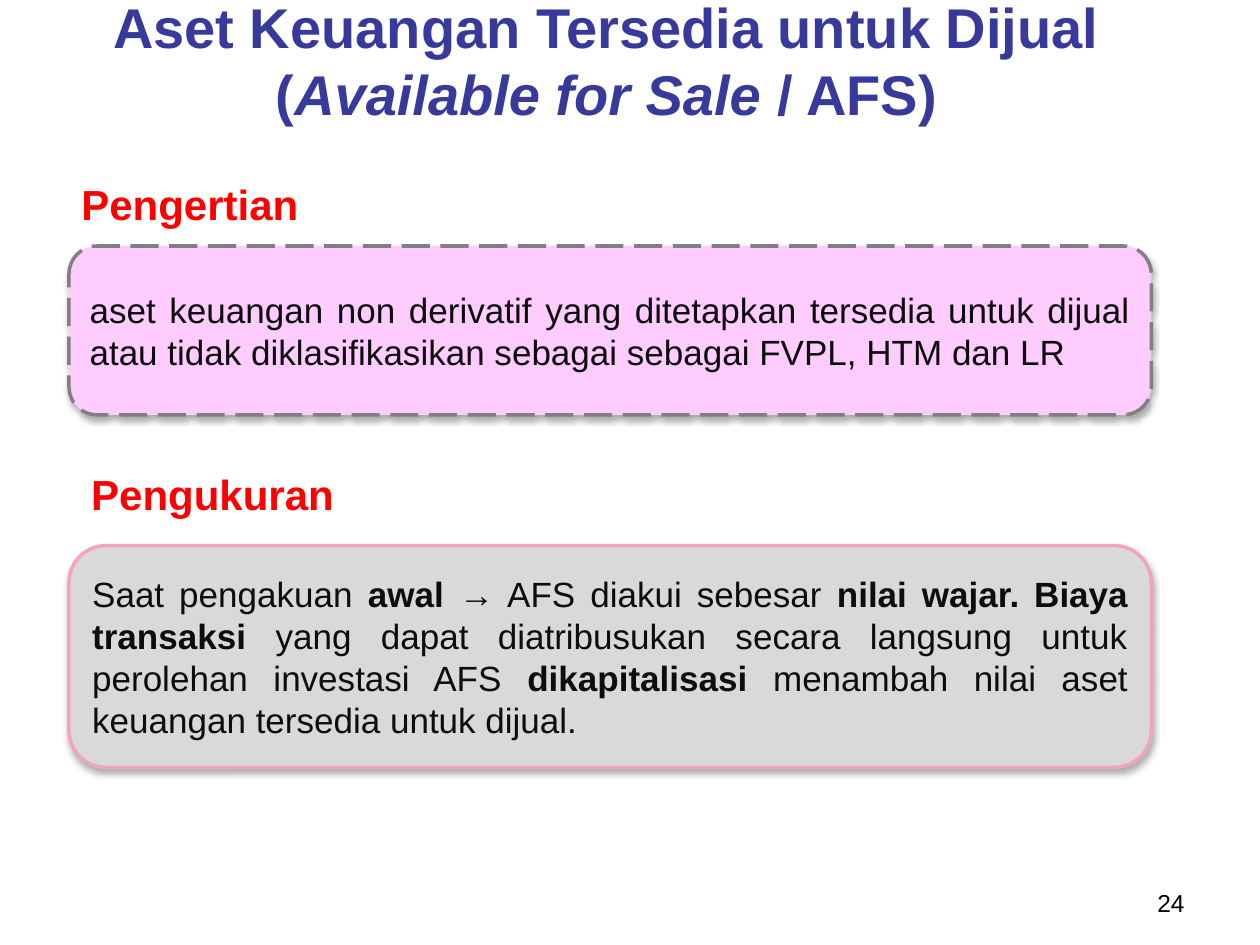
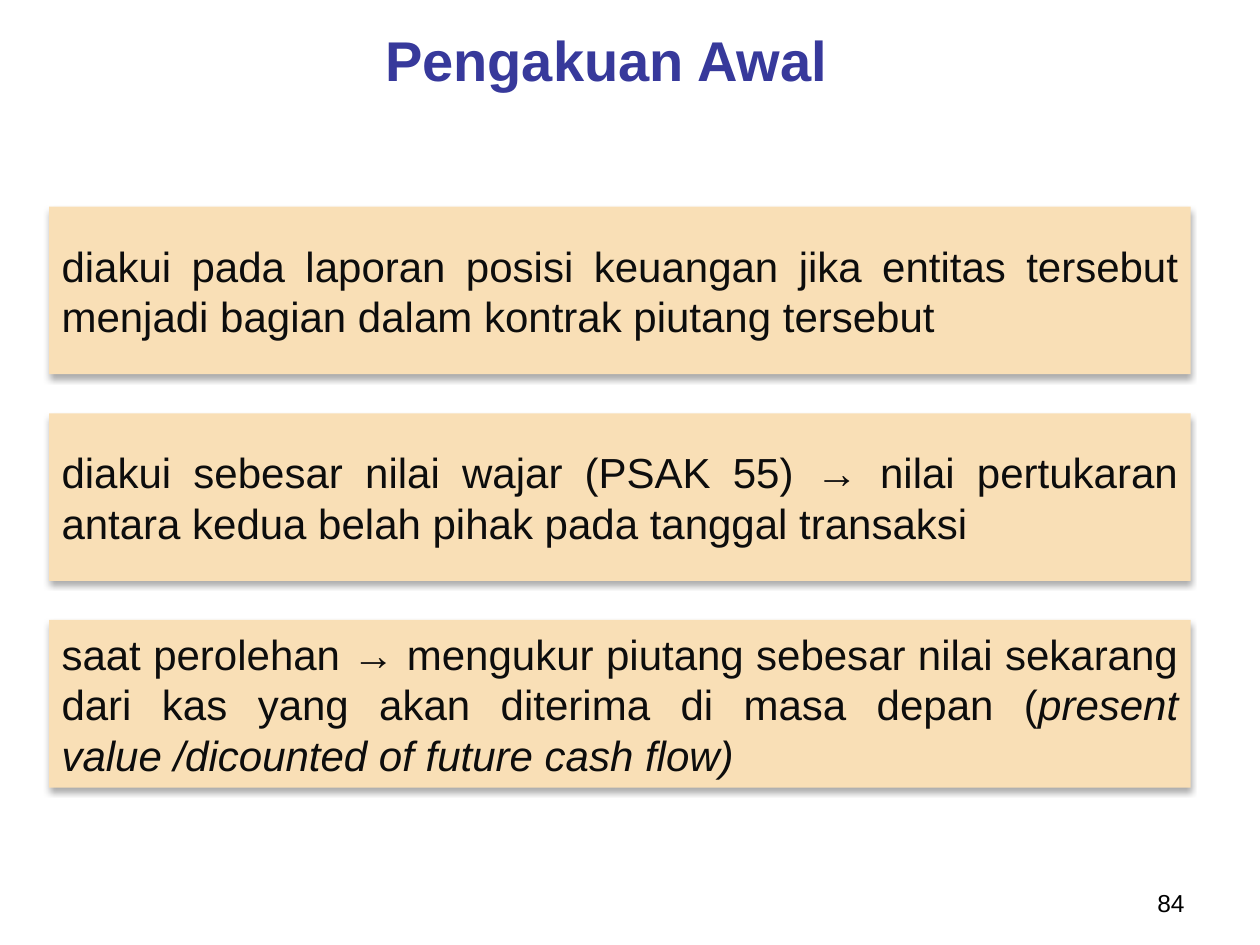
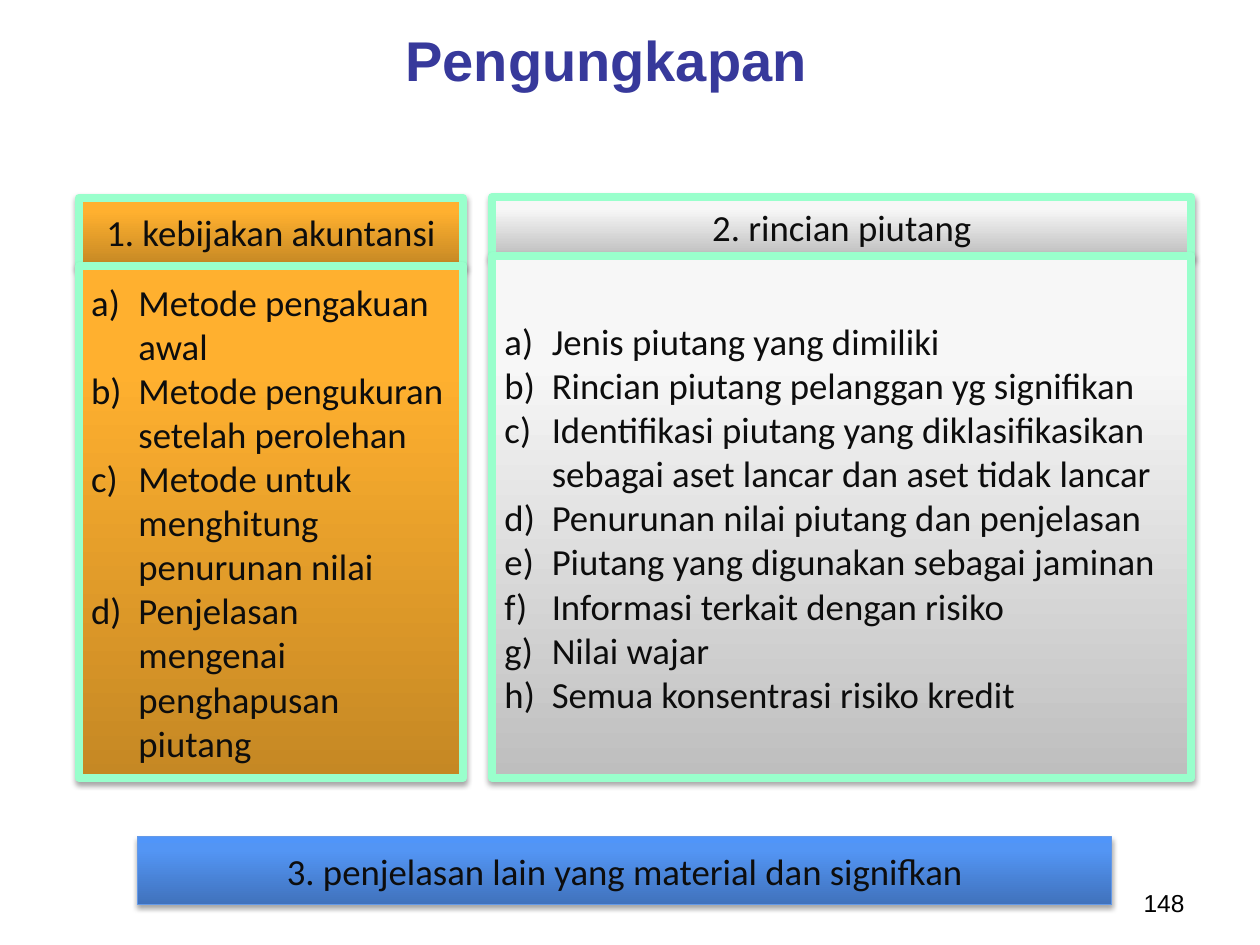
from dataclasses import dataclass
from typing import Optional

import lxml.etree
import pptx
import pptx.dml.color
import pptx.enum.dml
import pptx.enum.shapes
import pptx.enum.text
import pptx.oxml.ns
import pptx.util

Pt = pptx.util.Pt
RGB = pptx.dml.color.RGBColor
Align = pptx.enum.text.PP_ALIGN
Anchor = pptx.enum.text.MSO_ANCHOR
Fit = pptx.enum.text.MSO_AUTO_SIZE
Form = pptx.enum.shapes.MSO_SHAPE
Dash = pptx.enum.dml.MSO_LINE
qn = pptx.oxml.ns.qn

# Colours
NAVY = RGB(0x37, 0x39, 0x9B)
BLACK = RGB(0, 0, 0)
INK = RGB(0x0D, 0x0D, 0x0D)
RED = RGB(0xFF, 0, 0)
PINK = RGB(0xFF, 0xCC, 0xFF)
GRAY = RGB(0x80, 0x80, 0x80)
SILVER = RGB(0xD9, 0xD9, 0xD9)
ROSE = RGB(0xF1, 0xA5, 0xBD)
CREAM = RGB(0xF9, 0xDF, 0xB6)
MINT = RGB(0x99, 0xFF, 0xCC)
SKY = RGB(0x64, 0x99, 0xE7)

# Gradient stops at 0, 80 and 100 percent, from the bottom up
STOPS = (0, 80, 100)
AMBER = (RGB(0xC5, 0x88, 0x24), RGB(0xFF, 0xB0, 0x2F), RGB(0xFF, 0xB1, 0x31))
STEEL = (RGB(0xBE, 0xBE, 0xBE), RGB(0xF7, 0xF7, 0xF7), RGB(0xF8, 0xF8, 0xF8))
BLUE = (RGB(0x40, 0x72, 0xBC), RGB(0x53, 0x95, 0xF4), RGB(0x50, 0x95, 0xF9))


@dataclass(frozen=True)
class Box:
    left: float
    top: float
    width: float
    height: float

    def place(self) -> tuple:
        return Pt(self.left), Pt(self.top), Pt(self.width), Pt(self.height)


@dataclass(frozen=True)
class Type:
    size: float
    color: RGB
    font: str = "Arial"
    bold: bool = False


@dataclass(frozen=True)
class Span:
    text: str
    bold: bool = False
    slant: bool = False


@dataclass(frozen=True)
class Shade:
    alpha: int
    blur: float
    drop: float


@dataclass(frozen=True)
class Look:
    fill: object
    type: Type
    shade: Shade
    line: Optional[RGB] = None
    weight: float = 0
    dash: Optional[Dash] = None
    form: Form = Form.RECTANGLE


@dataclass(frozen=True)
class Column:
    left: float
    width: float
    top: float
    split: float
    look: Look
    head: str
    items: tuple


# Shared styles
TITLE = Type(32, NAVY, bold=True)
NUMBER = Type(14, BLACK)
LABEL = Type(24, RED, bold=True)
SMALL = Type(20, INK)
LARGE = Type(24, INK)
PANEL = Type(21, INK, "Calibri")
SOFT = Shade(32, 3.5, 2.2)
FIRM = Shade(35, 3.1, 1.8)
DASHED = Look(PINK, SMALL, SOFT, GRAY, 2, Dash.LONG_DASH, Form.ROUNDED_RECTANGLE)
ROUND = Look(SILVER, SMALL, SOFT, ROSE, 2, form=Form.ROUNDED_RECTANGLE)
CARD = Look(CREAM, LARGE, SOFT)
GOLD = Look(AMBER, PANEL, FIRM, MINT, 4.5)
PALE = Look(STEEL, PANEL, FIRM, MINT, 4.5)
BAR = Look(BLUE, PANEL, FIRM, SKY, 0.75)
TITLE_BOX = Box(22.5, 11.7, 648, 44.6)
NUMBER_BOX = Box(516.2, 504, 167.8, 25.2)


def write(para, spans: tuple, kind: Type, align: Align) -> None:
    para.alignment = align
    for span in spans:
        run = para.add_run()
        run.text = span.text
        run.font.name = kind.font
        run.font.size = Pt(kind.size)
        run.font.color.rgb = kind.color
        run.font.bold = kind.bold or span.bold
        run.font.italic = span.slant


def number(para) -> None:
    """Give a paragraph a hanging a), b), c) mark."""
    props = para._p.get_or_add_pPr()
    props.set("marL", str(Pt(27)))
    props.set("indent", str(-Pt(27)))
    lxml.etree.SubElement(props, qn("a:buAutoNum"), type="alphaLcParenR")


def tint(parent, color: RGB):
    return lxml.etree.SubElement(parent, qn("a:srgbClr"), val=str(color))


def blend(shape, colors: tuple) -> None:
    shape.fill.gradient()
    shape.fill.gradient_angle = 90
    stops = shape._element.spPr.find(qn("a:gradFill")).find(qn("a:gsLst"))
    for stop in list(stops):
        stops.remove(stop)
    for spot, color in zip(STOPS, colors):
        tint(lxml.etree.SubElement(stops, qn("a:gs"), pos=str(spot * 1000)), color)


def cast(shape, shade: Shade) -> None:
    shape.shadow.inherit = False
    effects = shape._element.spPr.find(qn("a:effectLst"))
    outer = lxml.etree.SubElement(
        effects, qn("a:outerShdw"), blurRad=str(Pt(shade.blur)),
        dist=str(Pt(shade.drop)), dir="5400000", rotWithShape="0")
    alpha = str(shade.alpha * 1000)
    lxml.etree.SubElement(tint(outer, BLACK), qn("a:alpha"), val=alpha)


def block(slide, box: Box, look: Look, align: Align):
    """Draw a filled shape and return its empty text frame."""
    shape = slide.shapes.add_shape(look.form, *box.place())
    if isinstance(look.fill, RGB):
        shape.fill.solid()
        shape.fill.fore_color.rgb = look.fill
    else:
        blend(shape, look.fill)
    if look.line is None:
        shape.line.fill.background()
    else:
        shape.line.color.rgb = look.line
        shape.line.width = Pt(look.weight)
        if look.dash is not None:
            shape.line.dash_style = look.dash
    cast(shape, look.shade)
    frame = shape.text_frame
    frame.word_wrap = True
    frame.vertical_anchor = Anchor.MIDDLE
    frame.paragraphs[0].alignment = align
    return frame


def panel(slide, box: Box, look: Look, spans: tuple, align: Align = Align.JUSTIFY) -> None:
    frame = block(slide, box, look, align)
    write(frame.paragraphs[0], spans, look.type, align)


def listing(slide, box: Box, look: Look, items: tuple) -> None:
    frame = block(slide, box, look, Align.LEFT)
    for i, item in enumerate(items):
        para = frame.add_paragraph() if i else frame.paragraphs[0]
        number(para)
        write(para, (Span(item),), look.type, Align.LEFT)


def label(slide, box: Box, text: str, kind: Type, align: Align = Align.LEFT) -> None:
    frame = slide.shapes.add_textbox(*box.place()).text_frame
    frame.word_wrap = True
    write(frame.paragraphs[0], (Span(text),), kind, align)


def start(deck, spans: tuple, page: int):
    """Add a slide with its title and page number."""
    slide = deck.slides.add_slide(deck.slide_layouts[5])
    title = slide.shapes.title
    title.left, title.top, title.width, title.height = TITLE_BOX.place()
    frame = title.text_frame
    frame.word_wrap = True
    frame.auto_size = Fit.NONE
    frame.vertical_anchor = Anchor.MIDDLE
    write(frame.paragraphs[0], spans, TITLE, Align.CENTER)
    label(slide, NUMBER_BOX, str(page), NUMBER, Align.RIGHT)
    return slide


def sale(deck) -> None:
    slide = start(deck, (
        Span("Aset Keuangan Tersedia untuk Dijual ("),
        Span("Available for Sale", slant=True),
        Span(" / AFS)")), 24)
    panel(slide, Box(39.4, 140.6, 618.5, 96.5), DASHED, (
        Span("aset keuangan non derivatif yang ditetapkan tersedia untuk dijual "
             "atau tidak diklasifikasikan sebagai sebagai FVPL, HTM dan LR"),))
    panel(slide, Box(39.4, 311.8, 618.5, 126.7), ROUND, (
        Span("Saat pengakuan "),
        Span("awal ", bold=True),
        Span("→ AFS diakui sebesar "),
        Span("nilai wajar. Biaya transaksi ", bold=True),
        Span("yang dapat diatribusukan secara langsung untuk perolehan investasi AFS "),
        Span("dikapitalisasi", bold=True),
        Span(" menambah nilai aset keuangan tersedia untuk dijual.")))
    label(slide, Box(39.4, 98.6, 258.5, 36), "Pengertian", LABEL)
    label(slide, Box(45, 264.2, 258.5, 36), "Pengukuran", LABEL)


def initial(deck) -> None:
    slide = start(deck, (Span("Pengakuan Awal"),), 84)
    cards = (
        (Span("diakui pada laporan posisi keuangan jika entitas tersebut "
              "menjadi bagian dalam kontrak piutang tersebut"),),
        (Span("diakui sebesar nilai wajar (PSAK 55) → nilai pertukaran "
              "antara kedua belah pihak pada tanggal transaksi"),),
        (Span("saat perolehan → mengukur piutang sebesar nilai sekarang "
              "dari kas yang akan diterima di masa depan ("),
         Span("present value /dicounted of future cash flow)", slant=True)),
    )
    for i, spans in enumerate(cards):
        panel(slide, Box(28.1, 118.1 + i * 118.1, 652.3, 95.8), CARD, spans)


def report(deck) -> None:
    slide = start(deck, (Span("Pengungkapan"),), 148)
    base = 444.6
    columns = (
        Column(45, 219.6, 113, 151.9, GOLD, "1. kebijakan akuntansi", (
            "Metode pengakuan awal",
            "Metode pengukuran setelah perolehan",
            "Metode untuk menghitung penurunan nilai",
            "Penjelasan mengenai penghapusan piutang")),
        Column(281.2, 399.6, 112.5, 146.5, PALE, "2. rincian piutang", (
            "Jenis piutang yang dimiliki",
            "Rincian piutang pelanggan yg signifikan",
            "Identifikasi piutang yang diklasifikasikan sebagai aset lancar "
            "dan aset tidak lancar",
            "Penurunan nilai piutang dan penjelasan",
            "Piutang yang digunakan sebagai jaminan",
            "Informasi terkait dengan risiko",
            "Nilai wajar",
            "Semua konsentrasi risiko kredit")),
    )
    for col in columns:
        head = Box(col.left, col.top, col.width, col.split - col.top)
        body = Box(col.left, col.split, col.width, base - col.split)
        panel(slide, head, col.look, (Span(col.head),), Align.CENTER)
        listing(slide, body, col.look, col.items)
    panel(slide, Box(78.75, 478.1, 556.6, 38.9), BAR,
          (Span("3. penjelasan lain yang material dan signifkan"),), Align.CENTER)


def main() -> None:
    deck = pptx.Presentation()
    deck.slide_width, deck.slide_height = Pt(720), Pt(540)
    sale(deck)
    initial(deck)
    report(deck)
    deck.save("out.pptx")


if __name__ == "__main__":
    main()
